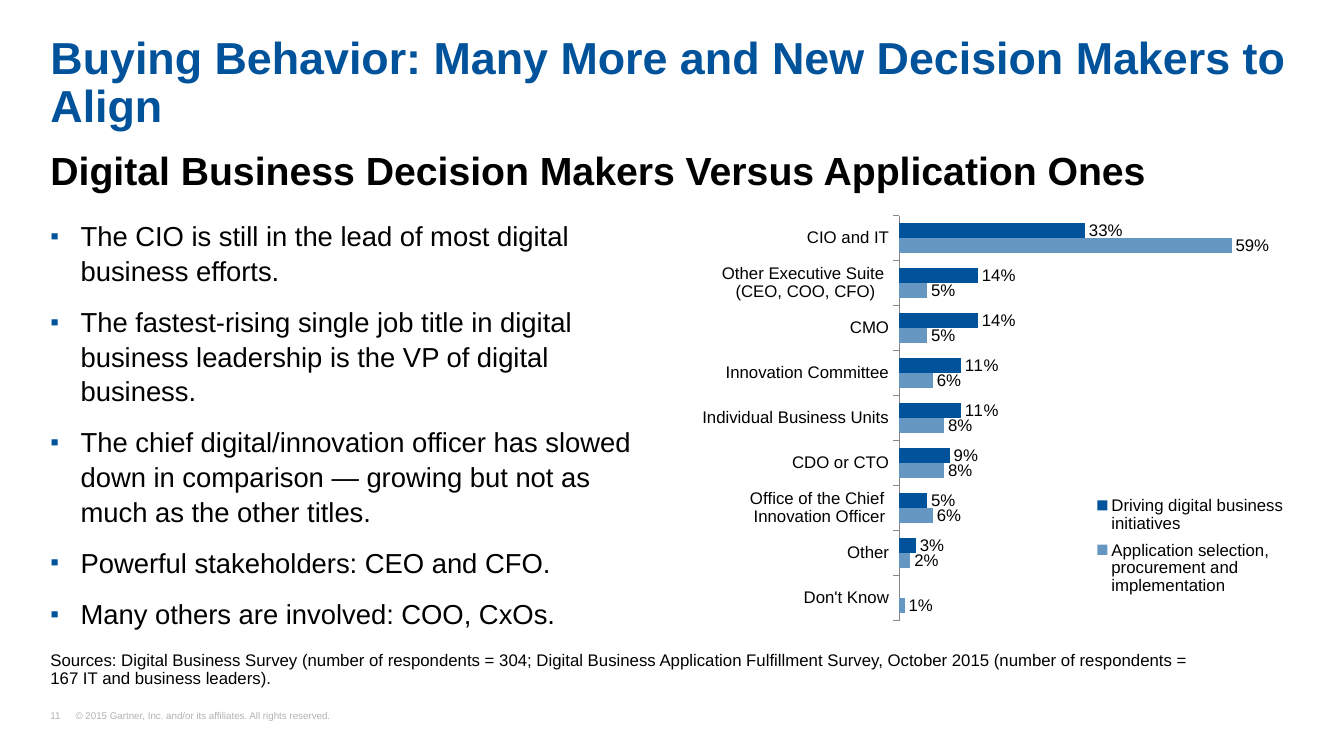
from lxml import etree
from pptx import Presentation
from pptx import util as u
from pptx.chart.data import CategoryChartData
from pptx.dml.color import RGBColor
from pptx.enum import chart as ch, text as tx
from pptx.oxml import parse_xml
from pptx.oxml.ns import qn, nsdecls

BLUE, LIGHT, BLACK = "00529B", "6697C3", "000000"


def paint(item, color):
    item.rgb = RGBColor.from_string(color)


def write(shape, lines, size, color=BLACK, bold=False, top=0, right=0,
          low=0, wrap=True, anchor=tx.MSO_ANCHOR.TOP, bullet=False):
    frame = shape.text_frame
    frame.text = "\n".join(lines)
    frame.word_wrap, frame.vertical_anchor = wrap, anchor
    frame.auto_size = tx.MSO_AUTO_SIZE.NONE
    frame.margin_left, frame.margin_right = 0, u.Inches(right)
    frame.margin_top, frame.margin_bottom = u.Inches(top), u.Inches(low)
    for para in frame.paragraphs:
        para.alignment = tx.PP_ALIGN.LEFT
        if bullet:
            props = para._p.get_or_add_pPr()
            props.set("marL", str(u.Inches(0.3)))
            props.set("indent", str(u.Inches(-0.3)))
            tint = etree.SubElement(props, qn("a:buClr"))
            etree.SubElement(tint, qn("a:srgbClr"), val=BLUE)
            etree.SubElement(props, qn("a:buSzPct"), val="90000")
            etree.SubElement(props, qn("a:buFont"), typeface="Arial")
            etree.SubElement(props, qn("a:buChar"), char="▪")
        for run in para.runs:
            font = run.font
            font.name, font.size, font.bold = "Arial", u.Pt(size), bold
            paint(font.color, color)
    return frame.paragraphs


deck = Presentation()
deck.slide_width, deck.slide_height = u.Inches(13.33), u.Inches(7.5)
slide = deck.slides.add_slide(deck.slide_layouts[5])
boxes = slide.shapes

# Title
title = boxes.title
title.left, title.top = u.Inches(0.5), u.Inches(0.25)
title.width, title.height = u.Inches(12.33), u.Inches(1.07)
head = write(title, ["Buying Behavior: Many More and New Decision Makers to Align"],
             32, BLUE, bold=True, top=0.1)
head[0].line_spacing = 0.9

# Subtitle
sub = boxes.add_textbox(u.Inches(0.5), u.Inches(1.45), u.Inches(12.33), u.Inches(0.6))
write(sub, ["Digital Business Decision Makers Versus Application Ones"],
      28, bold=True, right=0.05)

# Bullets
points = [
    "The CIO is still in the lead of most digital business efforts.",
    "The fastest-rising single job title in digital business leadership "
    "is the VP of digital business.",
    "The chief digital/innovation officer has slowed down in comparison — "
    "growing but not as much as the other titles.",
    "Powerful stakeholders: CEO and CFO.",
    "Many others are involved: COO, CxOs.",
]
body = boxes.add_textbox(u.Inches(0.5), u.Inches(2.16), u.Inches(6.06), u.Inches(4.49))
for para in write(body, points, 19.6, right=0.05, bullet=True):
    para.line_spacing, para.space_after = 1.05, u.Pt(12)

# Sources
note = boxes.add_textbox(u.Inches(0.5), u.Inches(6.42), u.Inches(11.47), u.Inches(0.46))
source = write(note, ["Sources: Digital Business Survey (number of respondents = 304; "
                      "Digital Business Application Fulfillment Survey, October 2015 "
                      "(number of respondents =\v167 IT and business leaders)."],
               12, top=0.05, low=0.05, wrap=False)
source[0].line_spacing = 0.9

# Footer with page number
foot = boxes.add_textbox(u.Inches(0.5), u.Inches(7.05), u.Inches(3.35), u.Inches(0.11))
line = write(foot, ["11\t© 2015 Gartner, Inc. and/or its affiliates. All rights reserved."],
             7, "B2B2B2", anchor=tx.MSO_ANCHOR.BOTTOM)[0]
tabs = etree.SubElement(line._p.get_or_add_pPr(), qn("a:tabLst"))
etree.SubElement(tabs, qn("a:tab"), pos=str(u.Inches(0.25)), algn="l")
line.line_spacing = 0.9

# Chart data: category, application selection, digital initiatives
rows = [
    ("Don't Know", 0.01, None),
    ("Other", 0.02, 0.03),
    ("Office of the Chief \nInnovation Officer", 0.06, 0.05),
    ("CDO or CTO", 0.08, 0.09),
    ("Individual Business Units", 0.08, 0.11),
    ("Innovation Committee", 0.06, 0.11),
    ("CMO", 0.05, 0.14),
    ("Other Executive Suite \n(CEO, COO, CFO)", 0.05, 0.14),
    ("CIO and IT", 0.59, 0.33),
]
names, apps, drive = zip(*rows)
data = CategoryChartData(number_format="0%")
data.categories = names
data.add_series("Application selection, procurement and implementation", apps)
data.add_series("Driving digital business initiatives", drive)
chart = boxes.add_chart(ch.XL_CHART_TYPE.BAR_CLUSTERED, u.Inches(6.81), u.Inches(1.97),
                        u.Inches(6.02), u.Inches(4.23), data).chart
chart.has_title = False
chart.font.name, chart.font.size = "Arial", u.Pt(12)
paint(chart.font.color, BLACK)

# Bars and labels
plot = chart.plots[0]
plot.gap_width, plot.overlap, plot.vary_by_categories = 100, 0, False
for bar, color in zip(plot.series, (LIGHT, BLUE)):
    bar.format.fill.solid()
    paint(bar.format.fill.fore_color, color)
    label = bar.data_labels
    label.show_value = True
    label.position = ch.XL_LABEL_POSITION.OUTSIDE_END
    label.number_format, label.number_format_is_linked = "0%", False

# Axes
cat, val = chart.category_axis, chart.value_axis
cat.major_tick_mark = ch.XL_TICK_MARK.OUTSIDE
cat.format.line.width = u.Pt(0.75)
paint(cat.format.line.color, "868686")
val.visible = val.has_major_gridlines = False
val.minimum_scale, val.maximum_scale = 0, 0.7

# Legend and manual layouts
chart.has_legend = True
key = chart.legend
key.position, key.include_in_layout = ch.XL_LEGEND_POSITION.RIGHT, False
area = chart._chartSpace.chart.plotArea
for old in area.findall(qn("c:layout")):
    area.remove(old)
for old in key._element.findall(qn("c:layout")):
    key._element.remove(old)
inner = '<c:layoutTarget val="inner"/>'
for part, spot, aim, place in ((area, 0, inner, (0.35, 0.04, 0.65, 0.95)),
                               (key._element, 1, "", (0.66, 0.68, 0.34, 0.27))):
    modes = '<c:xMode val="edge"/><c:yMode val="edge"/>'
    sizes = "".join(f'<c:{tag} val="{num}"/>' for tag, num in zip("xywh", place))
    part.insert(spot, parse_xml(f'<c:layout {nsdecls("c")}><c:manualLayout>{aim}{modes}'
                                f'{sizes}</c:manualLayout></c:layout>'))

deck.save("out.pptx")
